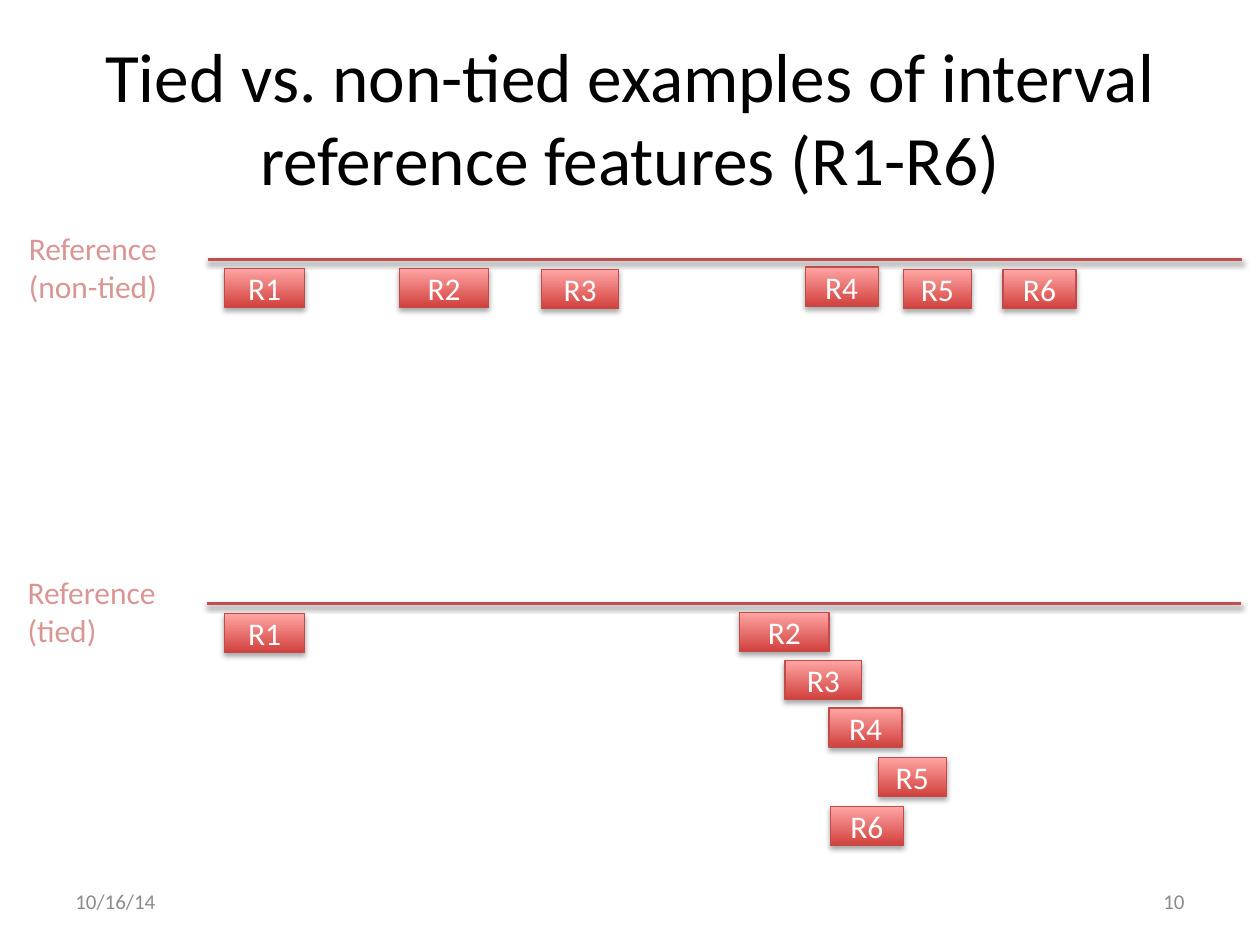
from lxml import etree
from pptx import Presentation
from pptx import util as u
from pptx.dml.color import RGBColor
from pptx.enum import shapes, text
from pptx.oxml.ns import qn

FONT = "Calibri"
BOX_H = 0.31
WIDTHS = {"R1": 0.64, "R2": 0.71, "R3": 0.61, "R4": 0.58, "R5": 0.54, "R6": 0.58}
NON_TIED = {"R1": (1.78, 2.13), "R2": (3.17, 2.13), "R3": (4.3, 2.14),
            "R4": (6.39, 2.12), "R5": (7.17, 2.14), "R6": (7.96, 2.14)}
TIED = {"R1": (1.78, 4.87), "R2": (5.87, 4.86), "R3": (6.23, 5.24),
        "R4": (6.58, 5.62), "R5": (6.97, 6.01), "R6": (6.59, 6.4)}


def rgb(color):
    return RGBColor.from_string(color)


def inches(*lengths):
    return [u.Inches(v) for v in lengths]


def write(tf, words, size, color, align=text.PP_ALIGN.LEFT):
    """Fill a text frame and format all of its paragraphs alike."""
    tf.text = words
    for p in tf.paragraphs:
        p.alignment = align
        for r in p.runs:
            r.font.name = FONT
            r.font.size = u.Pt(size)
            r.font.color.rgb = rgb(color)


def add_shadow(effects, alpha, distance):
    """Put a soft black shadow, falling straight down, in an effect list."""
    shadow = etree.SubElement(effects, qn("a:outerShdw"), blurRad=str(u.Pt(3.1)),
                              dist=str(u.Pt(distance)), dir="5400000", rotWithShape="0")
    black = etree.SubElement(shadow, qn("a:srgbClr"), val="000000")
    etree.SubElement(black, qn("a:alpha"), val=str(alpha * 1000))


def add_axis(s, left, right, y):
    line = s.shapes.add_connector(shapes.MSO_CONNECTOR.STRAIGHT, *inches(left, y, right, y))
    line.line.color.rgb = rgb("C0504D")
    line.line.width = u.Pt(2)
    add_shadow(etree.SubElement(line._element.spPr, qn("a:effectLst")), 38, 1.6)


def add_label(s, left, top, words):
    tf = s.shapes.add_textbox(*inches(left, top, 1.25, 0.71)).text_frame
    tf.word_wrap = False
    tf.auto_size = text.MSO_AUTO_SIZE.SHAPE_TO_FIT_TEXT
    write(tf, words, 18, "D99694")


def add_feature(s, name, left, top):
    sp = s.shapes.add_shape(shapes.MSO_SHAPE.RECTANGLE,
                            *inches(left, top, WIDTHS[name], BOX_H))
    sp.fill.gradient()
    sp.fill.gradient_angle = 90
    for stop, color in zip(sp.fill.gradient_stops, ("D1403C", "FFA6A5")):
        stop.color.rgb = rgb(color)
    sp.line.color.rgb = rgb("BF4C48")
    sp.line.width = u.Pt(0.75)
    sp.shadow.inherit = False
    add_shadow(sp._element.spPr.find(qn("a:effectLst")), 35, 1.8)
    sp.text_frame.vertical_anchor = text.MSO_ANCHOR.MIDDLE
    write(sp.text_frame, name, 18, "FFFFFF", text.PP_ALIGN.CENTER)


def add_track(s, left, y, words, features):
    """Draw one reference line with its label and its interval features."""
    add_axis(s, left, left + 8.21, y)
    add_label(s, left - 1.52, y - 0.29, words)
    for name, place in features.items():
        add_feature(s, name, *place)


def add_footer(s, left, words, align):
    tf = s.shapes.add_textbox(*inches(left, 6.95, 2.33, 0.4)).text_frame
    tf.word_wrap = True
    tf.vertical_anchor = text.MSO_ANCHOR.MIDDLE
    write(tf, words, 12, "8C8C8C", align)


def add_title(s, words):
    title = s.shapes.title
    title.left, title.top, title.width, title.height = inches(0.5, 0.3, 9, 1.25)
    title.text_frame.vertical_anchor = text.MSO_ANCHOR.MIDDLE
    write(title.text_frame, words, 39.6, "000000", text.PP_ALIGN.CENTER)


def main():
    prs = Presentation()
    prs.slide_width, prs.slide_height = inches(10, 7.5)
    s = prs.slides.add_slide(prs.slide_layouts[5])
    add_title(s, "Tied vs. non-tied examples of interval reference features (R1-R6)")
    add_track(s, 1.64, 4.79, "Reference\n(tied)", TIED)
    add_track(s, 1.65, 2.06, "Reference\n(non-tied)", NON_TIED)
    add_footer(s, 0.5, "10/16/14", text.PP_ALIGN.LEFT)
    add_footer(s, 7.17, "10", text.PP_ALIGN.RIGHT)
    prs.save("out.pptx")


if __name__ == "__main__":
    main()
